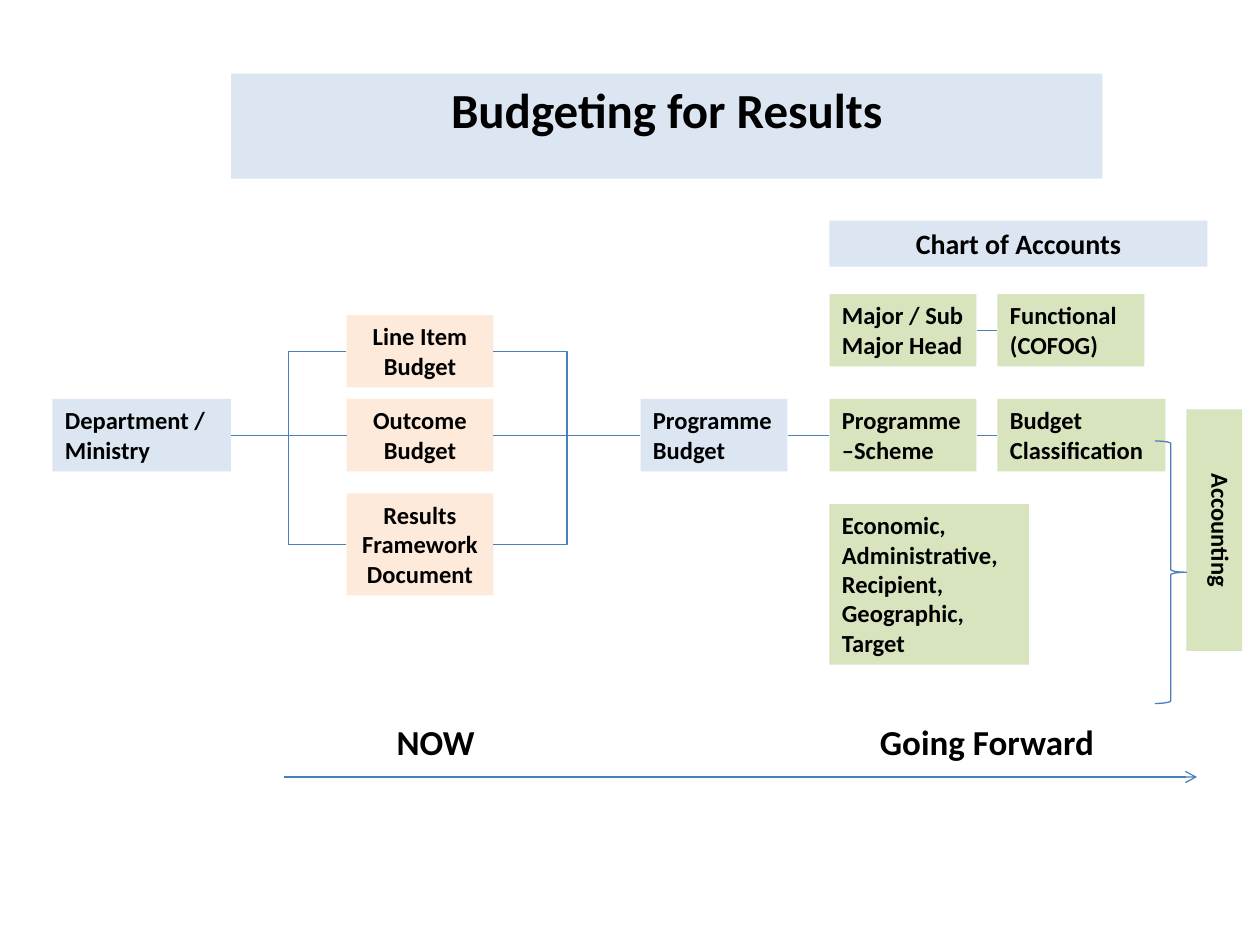
from pptx import Presentation
from pptx.dml.color import RGBColor
from pptx.enum.shapes import MSO_CONNECTOR, MSO_SHAPE
from pptx.enum.text import MSO_ANCHOR, MSO_AUTO_SIZE, PP_ALIGN
from pptx.oxml.ns import qn
from pptx.util import Pt
from lxml import etree

PX = 7620  # EMU per px, 120 px to the inch
LEFT, CENTER = PP_ALIGN.LEFT, PP_ALIGN.CENTER
STRAIGHT, ELBOW = MSO_CONNECTOR.STRAIGHT, MSO_CONNECTOR.ELBOW
LEFT_SITE, RIGHT_SITE = 1, 3
COLORS = {"blue": "DCE6F2", "orange": "FDEADA", "green": "D7E4BD",
          "line": "4B7EBC", "text": "000000"}

deck = Presentation()
deck.slide_width, deck.slide_height = 1200 * PX, 900 * PX
page = deck.slides.add_slide(deck.slide_layouts[5])


def write_box(text, left, top, width, height, fill=None, size=14, align=LEFT, box=None):
    if box is None:
        box = page.shapes.add_textbox(0, 0, 0, 0)
    box.left, box.top, box.width, box.height = (n * PX for n in (left, top, width, height))
    if fill:
        box.fill.solid()
        box.fill.fore_color.rgb = RGBColor.from_string(COLORS[fill])
    frame = box.text_frame
    frame.word_wrap = True
    frame.auto_size = MSO_AUTO_SIZE.SHAPE_TO_FIT_TEXT
    frame.vertical_anchor = MSO_ANCHOR.TOP
    para = frame.paragraphs[0]
    para.alignment = align
    span = para.add_run()
    span.text = text
    span.font.name, span.font.size, span.font.bold = "Calibri", Pt(size), True
    span.font.color.rgb = RGBColor.from_string(COLORS["text"])
    return box


def add_line(kind, start=None, end=None, ends=(0, 0, 0, 0)):
    line = page.shapes.add_connector(kind, *(n * PX for n in ends))
    if start is not None:
        line.begin_connect(start, RIGHT_SITE)
        line.end_connect(end, LEFT_SITE)
    line.line.color.rgb = RGBColor.from_string(COLORS["line"])
    line.line.width = Pt(0.75)
    etree.SubElement(line._element.spPr, qn("a:effectLst"))
    return line


# Headings
write_box("Budgeting for Results", 220, 70, 830, 69, fill="blue", size=28,
          align=CENTER, box=page.shapes.title)
write_box("Chart of Accounts", 790, 210, 360, 44, fill="blue", size=16, align=CENTER)

# Present budget flow
department = write_box("Department / Ministry", 50, 380, 170, 69, fill="blue")
programme = write_box("Programme Budget", 610, 380, 140, 69, fill="blue")
for text, top, height, kind in [
    ("Line Item Budget", 300, 69, ELBOW),
    ("Outcome Budget", 380, 69, STRAIGHT),
    ("Results Framework Document", 470, 97, ELBOW),
]:
    budget = write_box(text, 330, top, 140, height, fill="orange", align=CENTER)
    add_line(kind, department, budget)
    add_line(kind, budget, programme)

# Chart of accounts
major_head = write_box("Major / Sub Major Head", 790, 280, 140, 69, fill="green")
functional = write_box("Functional (COFOG)", 950, 280, 140, 69, fill="green")
scheme = write_box("Programme –Scheme", 790, 380, 140, 69, fill="green")
classification = write_box("Budget Classification", 950, 380, 160, 69, fill="green")
write_box("Economic, Administrative, Recipient, Geographic, Target",
          790, 480, 190, 153, fill="green")
for start, end in [(programme, scheme), (scheme, classification), (major_head, functional)]:
    add_line(STRAIGHT, start, end)

# Accounting bracket
accounting = write_box("Accounting", 1130, 390, 53, 230, fill="green", align=CENTER)
accounting.text_frame._txBody.bodyPr.set("vert", "vert")
brace = page.shapes.add_shape(MSO_SHAPE.RIGHT_BRACE, 1100 * PX, 420 * PX, 30 * PX, 250 * PX)
brace.shadow.inherit = False
brace.fill.background()
brace.line.color.rgb = RGBColor.from_string(COLORS["line"])
brace.line.width = Pt(0.75)

# Timeline
write_box("NOW", 320, 680, 190, 53, size=20, align=CENTER)
write_box("Going Forward", 770, 680, 340, 53, size=20, align=CENTER)
timeline = add_line(STRAIGHT, ends=(270, 740, 1140, 740))
etree.SubElement(timeline.line._get_or_add_ln(), qn("a:tailEnd"), type="arrow")

deck.save("out.pptx")
